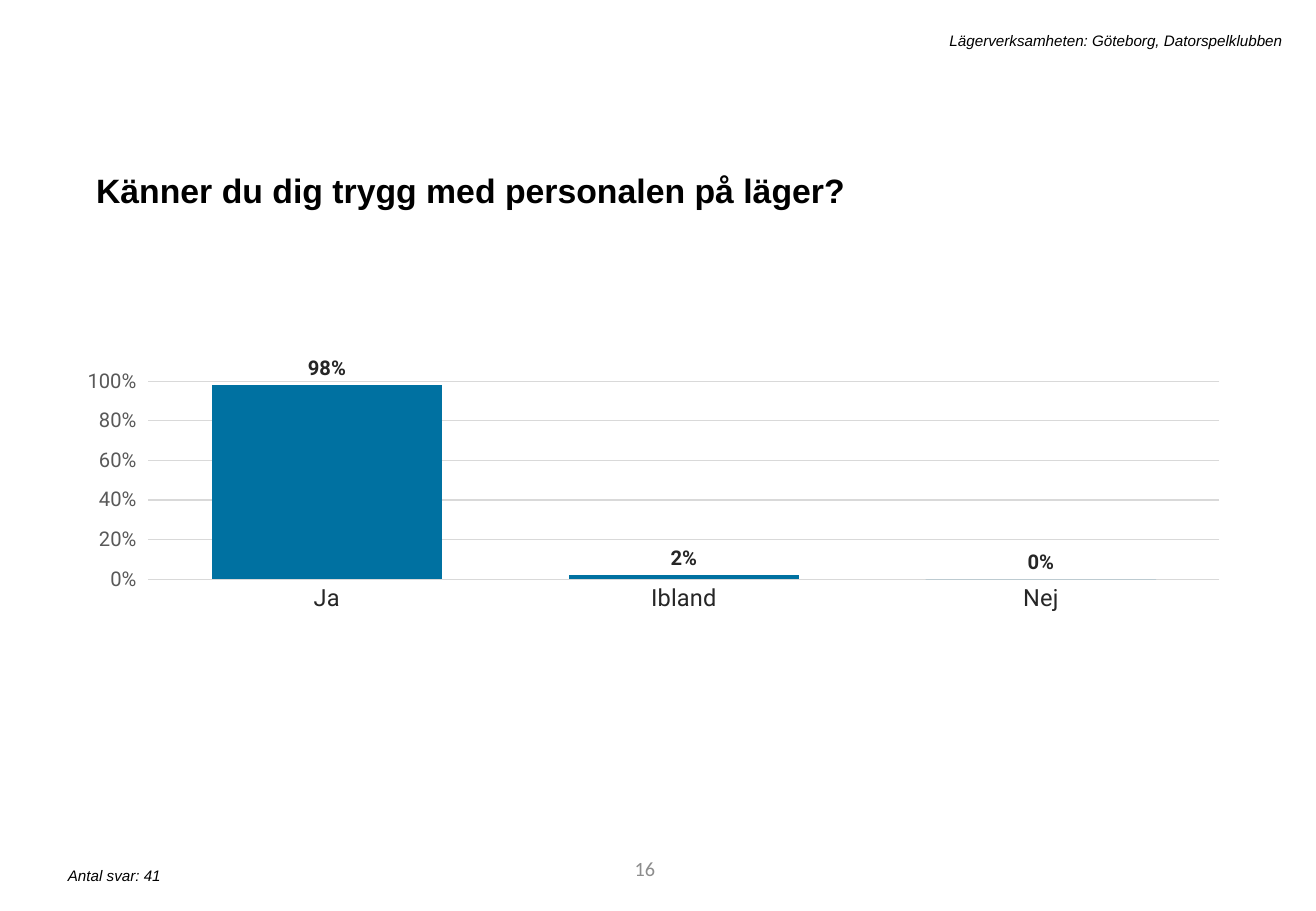
from dataclasses import dataclass
from typing import NamedTuple

from lxml import etree
from pptx import Presentation
from pptx.chart.data import CategoryChartData
from pptx.dml.color import RGBColor
from pptx.enum.chart import XL_CHART_TYPE as ChartType
from pptx.enum.chart import XL_LABEL_POSITION as LabelPosition
from pptx.enum.chart import XL_TICK_MARK as TickMark
from pptx.enum.text import MSO_ANCHOR as Anchor
from pptx.enum.text import MSO_AUTO_SIZE as AutoSize
from pptx.enum.text import PP_ALIGN as Align
from pptx.oxml.ns import qn
from pptx.util import Emu, Pt

PX = 9144  # EMU per px, 100 px to the inch


@dataclass(frozen=True)
class Theme:
    text_font: str = "Arial"
    number_font: str = "Calibri"
    chart_font: str = "Roboto"
    black: str = "000000"
    dark: str = "262626"
    grey: str = "595959"
    pale: str = "8C8C8C"
    grid: str = "D9D9D9"
    bar: str = "0071A1"
    title_size: int = 20
    category_size: int = 14
    label_size: int = 12
    chart_size: int = 10
    note_size: int = 9


class Box(NamedTuple):
    left: int
    top: int
    width: int
    height: int

    def emu(self):
        return [Emu(length * PX) for length in self]


THEME = Theme()
PAGE = Box(0, 0, 1083, 750)
ANSWERS = {"Ja": 0.98, "Ibland": 0.02, "Nej": 0}
PLOT_LAYOUT = {"x": 0.052, "y": 0.154, "w": 0.939, "h": 0.413}


def style_font(font, name, size, color, bold=False, italic=False):
    font.name, font.size = name, Pt(size)
    font.bold, font.italic = bold, italic
    font.color.rgb = RGBColor.from_string(color)


def style_line(line, color):
    line.color.rgb = RGBColor.from_string(color)
    line.width = Pt(0.75)


def add_text(page, box, text, align=Align.LEFT, anchor=Anchor.TOP, **font):
    frame = page.shapes.add_textbox(*box.emu()).text_frame
    frame.word_wrap = True
    frame.vertical_anchor = anchor
    para = frame.paragraphs[0]
    para.text, para.alignment = text, align
    style_font(para.runs[0].font, **font)


def set_title(page, box, text):
    title = page.shapes.title
    title.left, title.top, title.width, title.height = box.emu()
    frame = title.text_frame
    frame.text = text
    frame.word_wrap, frame.auto_size = True, AutoSize.NONE
    frame.vertical_anchor = Anchor.TOP
    para = frame.paragraphs[0]
    para.alignment = Align.LEFT
    para.line_spacing, para.space_before = 1.2, Pt(10)
    style_font(para.runs[0].font, THEME.text_font, THEME.title_size, THEME.black, bold=True)


def set_plot_layout(chart, layout):
    """Fix the inner plot area to fractions of the chart's size."""
    plot_area = chart.plots[0]._element.getparent()
    for old in plot_area.findall(qn("c:layout")):
        plot_area.remove(old)
    holder = etree.Element(qn("c:layout"))
    plot_area.insert(0, holder)
    manual = etree.SubElement(holder, qn("c:manualLayout"))
    settings = {"layoutTarget": "inner", "xMode": "edge", "yMode": "edge", **layout}
    for tag, value in settings.items():
        etree.SubElement(manual, qn(f"c:{tag}")).set("val", str(value))


def style_axes(chart):
    categories, values = chart.category_axis, chart.value_axis
    categories.major_tick_mark = TickMark.NONE
    style_font(categories.tick_labels.font, THEME.chart_font, THEME.category_size, THEME.dark)
    style_line(categories.format.line, THEME.grid)

    values.minimum_scale, values.maximum_scale, values.major_unit = 0, 1, 0.2
    values.tick_labels.number_format = "0%"
    values.tick_labels.number_format_is_linked = False
    style_font(values.tick_labels.font, THEME.chart_font, THEME.label_size, THEME.grey)
    values.format.line.fill.background()
    style_line(values.major_gridlines.format.line, THEME.grid)


def add_answer_chart(page, box, answers):
    data = CategoryChartData(number_format="0%")
    data.categories = list(answers)
    data.add_series("Series 1", list(answers.values()))
    chart = page.shapes.add_chart(ChartType.COLUMN_CLUSTERED, *box.emu(), data).chart
    chart.has_title = chart.has_legend = False
    style_font(chart.font, THEME.chart_font, THEME.chart_size, THEME.black)
    set_plot_layout(chart, PLOT_LAYOUT)
    style_axes(chart)

    plot = chart.plots[0]
    plot.gap_width, plot.vary_by_categories = 55, False
    series = plot.series[0]
    series.format.fill.solid()
    series.format.fill.fore_color.rgb = RGBColor.from_string(THEME.bar)
    labels = series.data_labels
    labels.show_value = True
    labels.position = LabelPosition.OUTSIDE_END
    labels.number_format, labels.number_format_is_linked = "0%", False
    style_font(labels.font, THEME.chart_font, THEME.label_size, THEME.dark, bold=True)


def add_notes_and_number(page, box, heading, answer_count, number):
    """Place the heading at the top right, and the count and page number at the foot."""
    note = dict(name=THEME.text_font, size=THEME.note_size, color=THEME.black, italic=True)
    right, bottom = box.left + box.width, box.top + box.height
    add_text(page, Box(right - 904, box.top + 21, 886, 25), heading, Align.RIGHT, **note)
    add_text(page, Box(box.left + 46, bottom - 42, 441, 25), answer_count, **note)
    add_text(page, Box(box.left + 305, bottom - 55, 244, 40), number, Align.RIGHT, Anchor.MIDDLE,
             name=THEME.number_font, size=THEME.label_size, color=THEME.pale)


def add_question_page(deck, box):
    page = deck.slides.add_slide(deck.slide_layouts[5])
    set_title(page, Box(box.left + 69, box.top + 128, 940, 47),
              "Känner du dig trygg med personalen på läger?")
    add_answer_chart(page, Box(box.left + 72, box.top + 253, 940, 395), ANSWERS)
    add_notes_and_number(page, box, "Lägerverksamheten: Göteborg, Datorspelklubben",
                         "Antal svar: 41", "16")


def main():
    deck = Presentation()
    deck.slide_width, deck.slide_height = PAGE.emu()[2:]
    add_question_page(deck, PAGE)
    deck.save("out.pptx")


if __name__ == "__main__":
    main()
